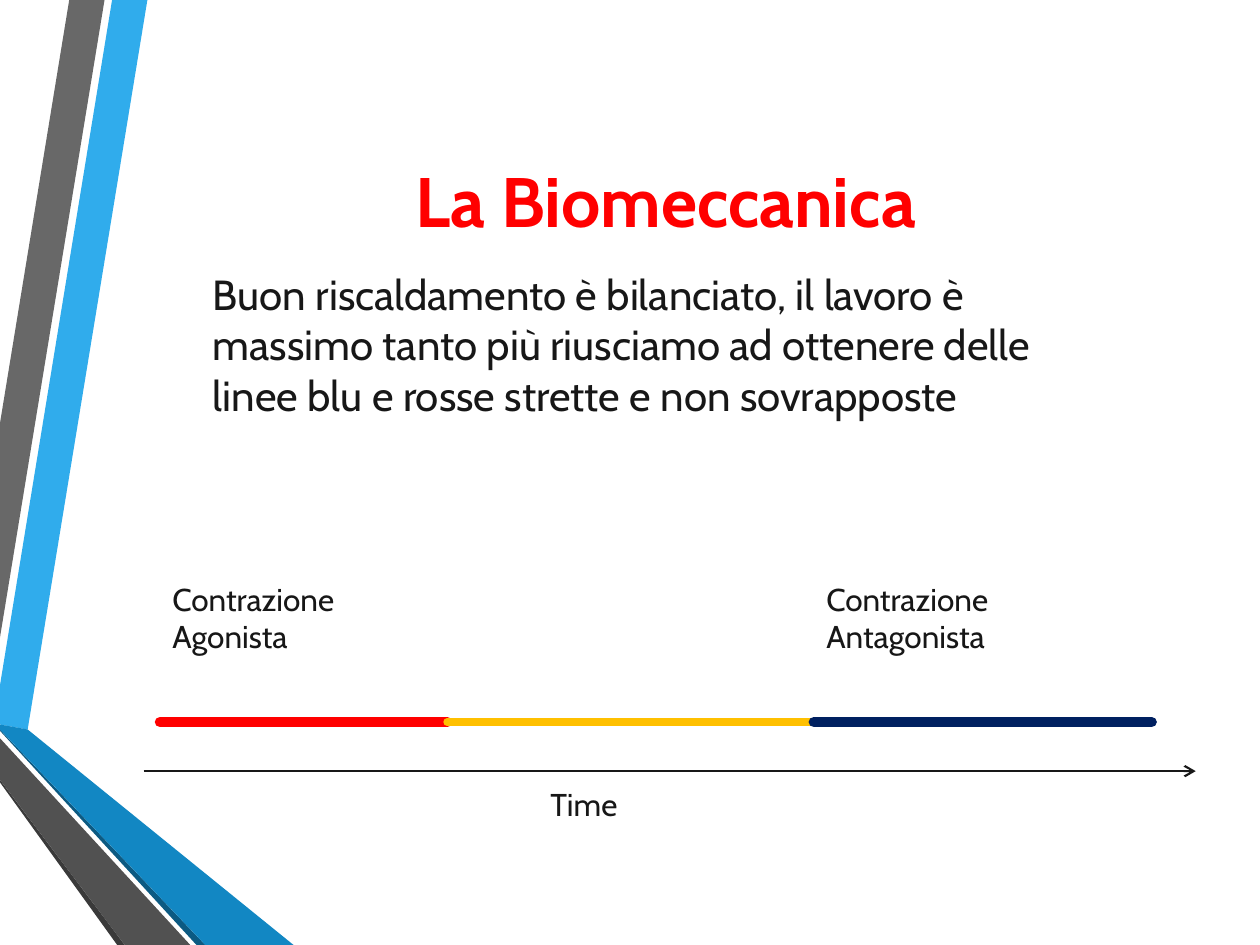
from dataclasses import dataclass
from itertools import pairwise

from lxml.etree import SubElement
from pptx import Presentation
from pptx.dml.color import RGBColor
from pptx.enum.shapes import MSO_CONNECTOR
from pptx.enum.text import MSO_ANCHOR, MSO_AUTO_SIZE, PP_ALIGN
from pptx.oxml.ns import qn
from pptx.util import Inches, Pt


@dataclass(frozen=True)
class Theme:
    font: str = "Cabin"
    title_size: int = 40
    body_size: int = 24
    label_size: int = 18
    text: str = "171717"
    title: str = "FF0000"
    agonist: str = "FF0000"
    transition: str = "FFC000"
    antagonist: str = "002060"
    axis: str = "181818"


THEME = Theme()


@dataclass(frozen=True)
class Box:
    left: float
    top: float
    width: float
    height: float

    def point(self, x, y):
        """Position at x, y percent of this box."""
        return (round(self.left + self.width * x / 100),
                round(self.top + self.height * y / 100))

    def area(self, x, y, width, height):
        """Box inside this one, in percent of its size."""
        return Box(*self.point(x, y),
                   round(self.width * width / 100), round(self.height * height / 100))

    def frame(self):
        return self.left, self.top, self.width, self.height


# Ribbons of the left margin: colour and outline in percent of the slide
RIBBONS = [
    ("30ACEC", [(0, 72.53), (0, 76.67), (2.2, 77.2), (11.7, 0), (8.9, 0)]),
    ("686868", [(8.3, 0), (5.5, 0), (0, 44.8), (0, 67.47)]),
    ("3A3A3A", [(0, 82.53), (0, 82.8), (9.3, 100), (9.9, 100)]),
    ("0C5A82", [(0, 77.2), (0, 77.33), (15.6, 100), (16.3, 100)]),
    ("1287C3", [(0, 77.2), (16.3, 100), (23.3, 100), (2.2, 77.2), (0, 76.67)]),
    ("515151", [(0, 82.53), (9.9, 100), (15.1, 100), (0, 78.13)]),
]


def write_text(shape, *lines, size, color=THEME.text, bold=False, align=PP_ALIGN.LEFT):
    frame = shape.text_frame
    frame.word_wrap = True
    for index, line in enumerate(lines):
        paragraph = frame.add_paragraph() if index else frame.paragraphs[0]
        paragraph.alignment = align
        run = paragraph.add_run()
        run.text = line
        run.font.name = THEME.font
        run.font.size = Pt(size)
        run.font.bold = bold
        run.font.color.rgb = RGBColor.from_string(color)


def add_label(slide, box, *lines, size=THEME.label_size):
    shape = slide.shapes.add_textbox(*box.frame())
    write_text(shape, *lines, size=size)
    shape.text_frame.auto_size = MSO_AUTO_SIZE.SHAPE_TO_FIT_TEXT


def add_line(slide, start, end, color, width, rounded=False, arrow=False):
    connector = slide.shapes.add_connector(MSO_CONNECTOR.STRAIGHT, *start, *end)
    connector.line.color.rgb = RGBColor.from_string(color)
    connector.line.width = Pt(width)
    properties = connector._element.spPr
    outline = properties.find(qn("a:ln"))
    if rounded:
        outline.set("cap", "rnd")
    if arrow:
        SubElement(outline, qn("a:tailEnd"), type="arrow")
    SubElement(properties, qn("a:effectLst"))


def draw_ribbons(slide, box):
    for color, outline in RIBBONS:
        start, *rest = [box.point(*corner) for corner in outline]
        builder = slide.shapes.build_freeform(*start)
        builder.add_line_segments(rest, close=True)
        shape = builder.convert_to_shape()
        shape.shadow.inherit = False
        shape.fill.solid()
        shape.fill.fore_color.rgb = RGBColor.from_string(color)
        shape.line.fill.background()


def place_title(slide, box):
    title = slide.shapes.title
    title.left, title.top, title.width, title.height = box.frame()
    title.text_frame.vertical_anchor = MSO_ANCHOR.MIDDLE
    write_text(title, "La Biomeccanica", size=THEME.title_size, color=THEME.title,
               bold=True, align=PP_ALIGN.CENTER)


def draw_timeline(slide, box):
    # Contraction phases, end to end
    edges = [1.56, 28.86, 63.71, 95.81]
    phases = [(THEME.agonist, 6), (THEME.transition, 4.5), (THEME.antagonist, 6)]
    for (start, end), (color, width) in zip(pairwise(edges), phases):
        add_line(slide, box.point(start, 58.13), box.point(end, 58.13),
                 color, width, rounded=True)

    # Time axis
    add_line(slide, box.point(0, 77.34), box.point(100, 77.34),
             THEME.axis, 1.25, arrow=True)
    add_label(slide, box.area(37.49, 80.3, 21.56, 19.7), "Time")

    # Phase labels
    add_label(slide, box.area(edges[0], 0, 28.26, 34.98), "Contrazione Agonista")
    add_label(slide, box.area(edges[2], 0, 24.55, 34.98), "Contrazione", "Antagonista")


def main():
    presentation = Presentation()
    presentation.slide_width = Inches(10)
    presentation.slide_height = Inches(7.5)
    page = Box(0, 0, presentation.slide_width, presentation.slide_height)
    slide = presentation.slides.add_slide(presentation.slide_layouts[5])

    draw_ribbons(slide, page)
    place_title(slide, page.area(10.7, 6.67, 84.3, 28.93))
    add_label(slide, page.area(15.9, 27.73, 72.1, 26.93),
              "Buon riscaldamento è bilanciato, il lavoro è massimo tanto più riusciamo "
              "ad ottenere delle linee blu e rosse strette e non sovrapposte",
              size=THEME.body_size)
    draw_timeline(slide, page.area(11.4, 60.67, 83.5, 27.07))

    presentation.save("out.pptx")


if __name__ == "__main__":
    main()
